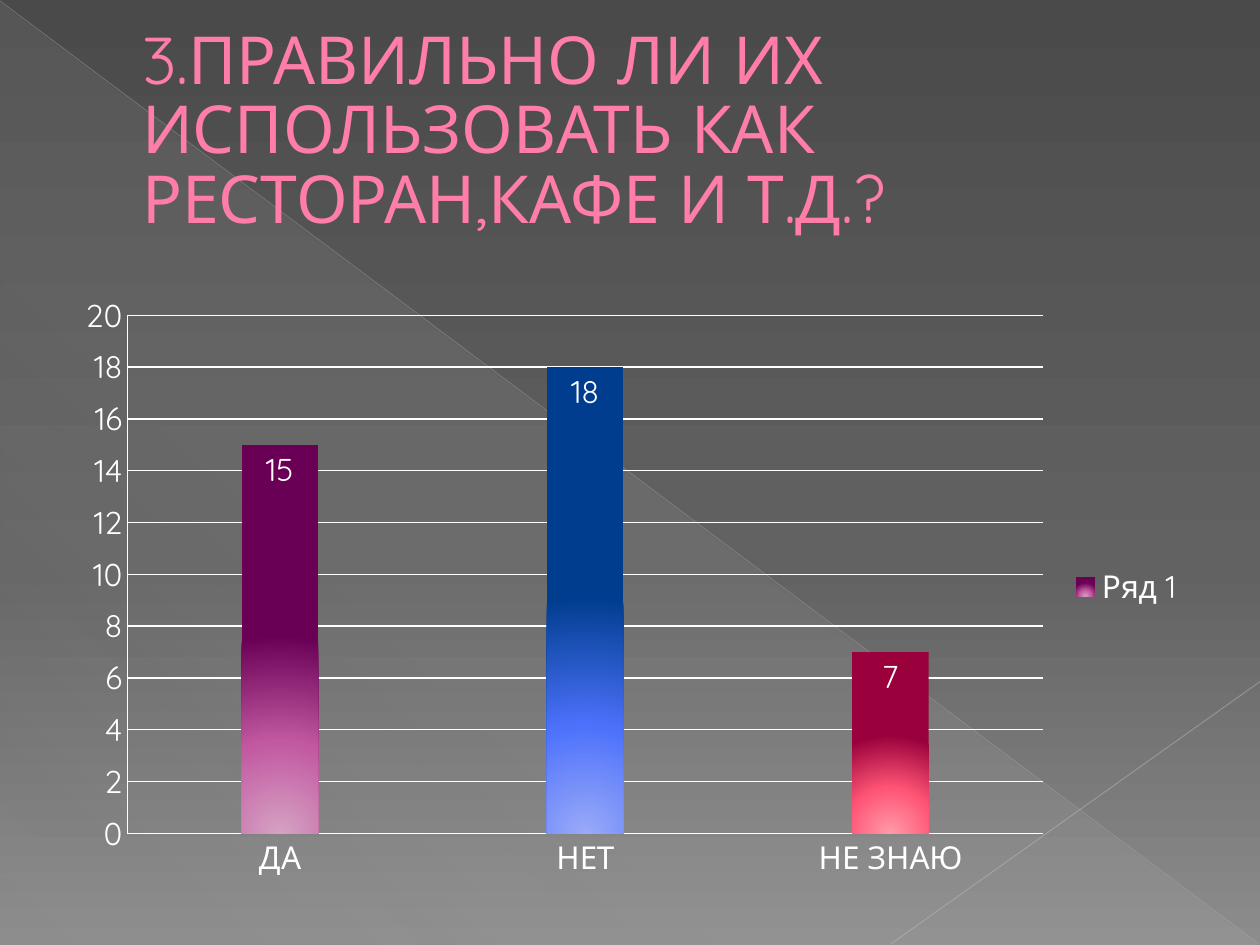
import pptx
import pptx.chart.data
import pptx.dml.color
import pptx.enum.chart
import pptx.enum.shapes
import pptx.enum.text
import pptx.oxml
import pptx.oxml.ns
import pptx.util
from dataclasses import dataclass

Pt = pptx.util.Pt
qn = pptx.oxml.ns.qn
NAMESPACE = pptx.oxml.ns.nsdecls("a")


@dataclass(frozen=True)
class Theme:
    font: str = "Quicksand"
    title_size: float = 37.8
    chart_size: float = 18
    title: str = "FF7DA7"
    title_outline: str = "B12761"
    text: str = "FFFFFF"
    # Gradient stops: position, colour, opacity (percent)
    background: tuple = ((0, "4A4A4A", 100), (60, "626262", 100), (100, "8C8C8C", 100))
    triangle: tuple = ((0, "D2D2D2", 10), (70, "D2D2D2", 8), (100, "D2D2D2", 1))
    columns: tuple = (
        ((0, "D5A2C3", 100), (46, "C259A1", 100), (100, "690055", 100)),
        ((0, "9AAAF8", 100), (46, "4C71FB", 100), (100, "003D8E", 100)),
        ((0, "FF9BA9", 100), (46, "FF5575", 100), (100, "99003C", 100)),
    )


def rgb(color):
    return pptx.dml.color.RGBColor.from_string(color)


def set_gradient(fill, owner, stops, angle=None):
    """Fill with a linear gradient, or a radial one from below if no angle."""
    fill.solid()
    solid = next(owner.iter(qn("a:solidFill")))
    stop_xml = "".join(
        f'<a:gs pos="{position * 1000}"><a:srgbClr val="{color}">'
        f'<a:alpha val="{opacity * 1000}"/></a:srgbClr></a:gs>'
        for position, color, opacity in stops
    )
    if angle is None:
        direction = ('<a:path path="circle"><a:fillToRect l="50000" t="155000" '
                     'r="50000" b="-55000"/></a:path>')
    else:
        direction = f'<a:lin ang="{angle * 60000}" scaled="0"/>'
    gradient = pptx.oxml.parse_xml(
        f'<a:gradFill {NAMESPACE} rotWithShape="1"><a:gsLst>{stop_xml}</a:gsLst>'
        f"{direction}</a:gradFill>"
    )
    solid.getparent().replace(solid, gradient)


class SlideBuilder:
    def __init__(self, slide, theme):
        self.slide = slide
        self.theme = theme

    def background(self):
        set_gradient(self.slide.background.fill, self.slide.element,
                     self.theme.background, angle=90)

    def triangle(self, left, top, width, height):
        shape = self.slide.shapes.add_shape(
            pptx.enum.shapes.MSO_SHAPE.RIGHT_TRIANGLE,
            Pt(left), Pt(top), Pt(width), Pt(height))
        shape.shadow.inherit = False
        shape.line.fill.background()
        set_gradient(shape.fill, shape._element, self.theme.triangle, angle=133)

    def line(self, start, end, color, width, opacity):
        connector = self.slide.shapes.add_connector(
            pptx.enum.shapes.MSO_CONNECTOR.STRAIGHT,
            *(Pt(length) for length in (*start, *end)))
        connector.line.width = Pt(width)
        connector.line.color.rgb = rgb(color)
        properties = connector._element.spPr
        color_element = next(properties.iter(qn("a:srgbClr")))
        color_element.append(pptx.oxml.parse_xml(
            f'<a:alpha {NAMESPACE} val="{opacity * 1000}"/>'))
        properties.append(pptx.oxml.parse_xml(f"<a:effectLst {NAMESPACE}/>"))

    def title(self, text, left, top, width, height):
        shape = self.slide.shapes.title
        shape.left, shape.top, shape.width, shape.height = (
            Pt(left), Pt(top), Pt(width), Pt(height))
        self.slide.shapes._spTree.append(shape._element)  # in front of the decoration
        frame = shape.text_frame
        frame.word_wrap = True
        frame.auto_size = pptx.enum.text.MSO_AUTO_SIZE.NONE
        frame.vertical_anchor = pptx.enum.text.MSO_ANCHOR.MIDDLE
        paragraph = frame.paragraphs[0]
        paragraph.alignment = pptx.enum.text.PP_ALIGN.LEFT
        paragraph.line_spacing = 0.88
        paragraph._p.get_or_add_pPr().set("marL", str(Pt(38)))
        run = paragraph.add_run()
        run.text = text
        self.format_font(run.font, self.theme.title_size, self.theme.title)
        run._r.get_or_add_rPr().insert(0, pptx.oxml.parse_xml(
            f'<a:ln {NAMESPACE} w="{Pt(0.5)}"><a:solidFill>'
            f'<a:srgbClr val="{self.theme.title_outline}"/></a:solidFill></a:ln>'))

    def format_font(self, font, size, color):
        font.name = self.theme.font
        font.size = Pt(size)
        font.bold = False
        font.color.rgb = rgb(color)

    def column_chart(self, categories, name, values, left, top, width, height):
        theme = self.theme
        data = pptx.chart.data.CategoryChartData()
        data.categories = categories
        data.add_series(name, values)
        chart = self.slide.shapes.add_chart(
            pptx.enum.chart.XL_CHART_TYPE.COLUMN_STACKED,
            Pt(left), Pt(top), Pt(width), Pt(height), data).chart
        chart.has_title = False
        self.format_font(chart.font, theme.chart_size, theme.text)
        chart.has_legend = True
        chart.legend.position = pptx.enum.chart.XL_LEGEND_POSITION.RIGHT
        chart.legend.include_in_layout = False

        # Axes and gridlines
        value_axis = chart.value_axis
        value_axis.minimum_scale, value_axis.maximum_scale = 0, 20
        value_axis.major_unit = 2
        value_axis.has_major_gridlines = True
        for axis in (chart.category_axis, value_axis):
            axis.major_tick_mark = pptx.enum.chart.XL_TICK_MARK.NONE
            axis.minor_tick_mark = pptx.enum.chart.XL_TICK_MARK.NONE
        for part in (chart.category_axis, value_axis, value_axis.major_gridlines):
            part.format.line.color.rgb = rgb(theme.text)
            part.format.line.width = Pt(0.75)

        # Columns: the first gradient is the series', the others override it
        plot = chart.plots[0]
        plot.gap_width, plot.overlap = 300, 100
        plot.vary_by_categories = False
        series = plot.series[0]
        set_gradient(series.format.fill, series._element, theme.columns[0])
        for index, stops in enumerate(theme.columns[1:], start=1):
            set_gradient(series.points[index].format.fill, series._element, stops)
        labels = series.data_labels
        labels.show_value = True
        labels.position = pptx.enum.chart.XL_LABEL_POSITION.INSIDE_END
        self.format_font(labels.font, theme.chart_size, theme.text)


def main():
    presentation = pptx.Presentation()
    presentation.slide_width, presentation.slide_height = Pt(720), Pt(540)
    slide = presentation.slides.add_slide(presentation.slide_layouts[5])
    builder = SlideBuilder(slide, Theme())

    # Backdrop
    builder.background()
    builder.triangle(0.5, 1, 719, 539)
    builder.line((0, 0.5), (719.5, 539.5), "BFBFBF", 0.39, opacity=35)
    builder.line((720, 389.5), (509, 539.5), "C6C6C6", 0.47, opacity=45)

    # Question and answers
    builder.title("3.ПРАВИЛЬНО ЛИ ИХ ИСПОЛЬЗОВАТЬ КАК РЕСТОРАН,КАФЕ И Т.Д.?",
                  36, 21, 648, 110)
    builder.column_chart(("ДА", "НЕТ", "НЕ ЗНАЮ"), "Ряд 1", (15, 18, 7),
                         36, 162, 648, 346.5)
    presentation.save("out.pptx")


if __name__ == "__main__":
    main()
